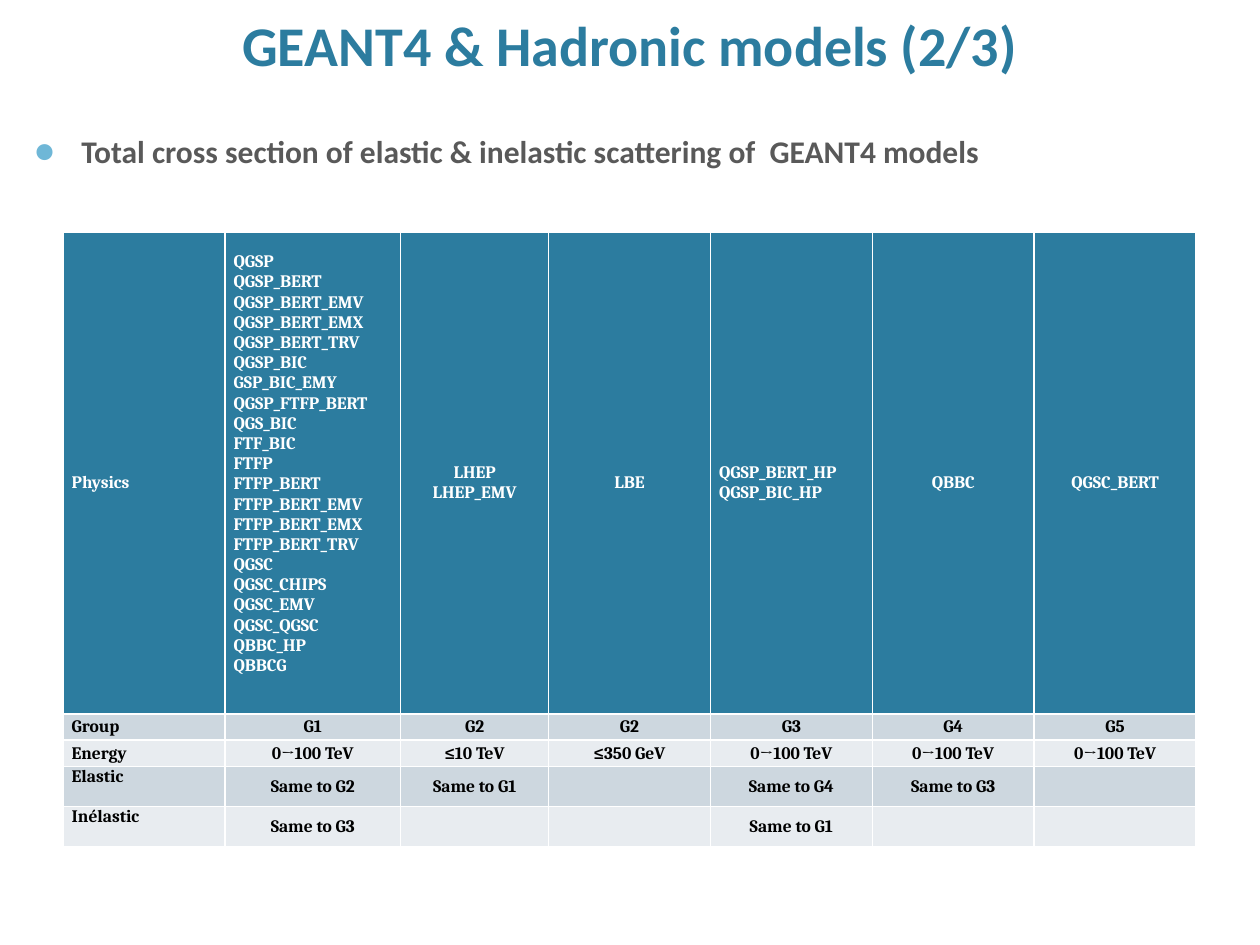
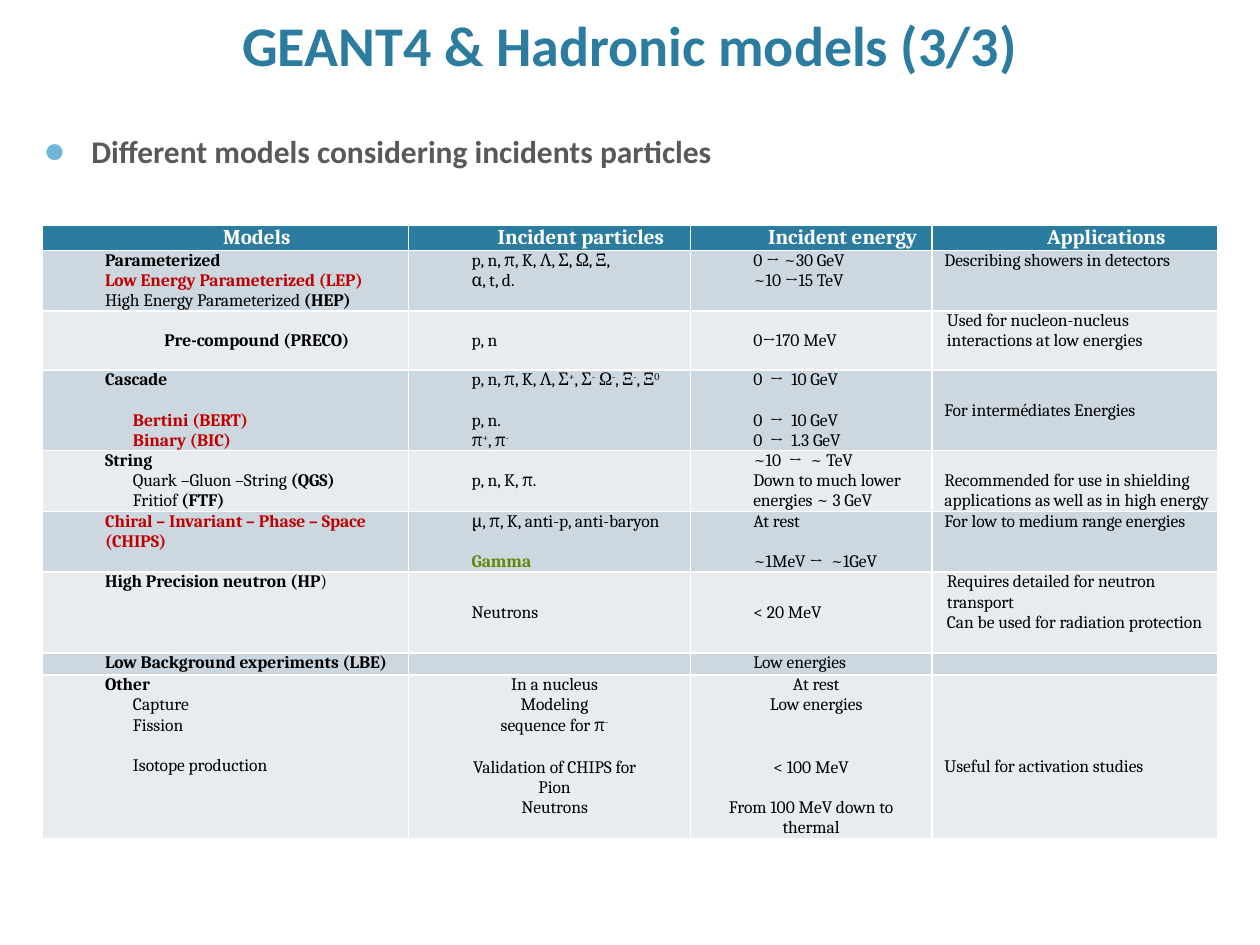
"""Builds two slides on GEANT4 hadronic models."""
import pptx
import pptx.dml.color
import pptx.enum.text
import pptx.oxml.ns
import pptx.util
from lxml import etree

Pt = pptx.util.Pt
ALIGN = pptx.enum.text.PP_ALIGN
ANCHOR = pptx.enum.text.MSO_ANCHOR

COLORS = {
    "teal": "2C7C9F", "bullet": "6FB7D7", "grey": "595959", "white": "FFFFFF",
    "black": "000000", "red": "C00000", "green": "5E8805",
    "band": "CDD7DF", "pale": "E8ECF0",
}
LINE = 11.5
INDENT = 36
SUB_INDENT = 52
NARROW = 7.2
SIDE = 8.64


def add_xml(parent, tag, **attributes):
    return etree.SubElement(parent, pptx.oxml.ns.qn(tag), attributes)


def write(paragraph, text, font="Cambria", size=10, color="black", bold=False):
    for position, part in enumerate(text.split("^")):
        if part:
            run = paragraph.add_run()
            run.text = part
            run.font.name = font
            run.font.size = Pt(size)
            run.font.bold = bold
            run.font.color.rgb = pptx.dml.color.RGBColor.from_string(COLORS[color])
            if position % 2:
                run.font._element.set("baseline", "30000")


def line(*runs, gap=0, indent=None, **style):
    pairs = [(run, {}) if isinstance(run, str) else run for run in runs]
    return {"runs": [(text, {**style, **own}) for text, own in pairs],
            "gap": gap, "indent": indent}


def bold(text, color="black", **place):
    return line(text, bold=True, color=color, **place)


def sub(*runs, **style):
    return line(*runs, indent=SUB_INDENT, **style)


def strong(text):
    return text, {"bold": True}


def cell(*lines, indent=INDENT, side=0, lead=0, middle=False, center=False):
    return {"lines": [line(item) if isinstance(item, str) else item for item in lines],
            "indent": indent, "side": side, "lead": lead,
            "middle": middle, "center": center}


def mid(*lines, **place):
    return cell(*lines, middle=True, **place)


def use(*lines, **place):
    return cell(*lines, **{"indent": NARROW, **place})


class Deck:
    def __init__(self):
        self.presentation = pptx.Presentation()
        self.presentation.slide_width = Pt(720)
        self.presentation.slide_height = Pt(540)
        self.slide = None

    def new_slide(self):
        layout = self.presentation.slide_layouts[1]
        self.slide = self.presentation.slides.add_slide(layout)

    def place(self, holder, left, top, width, height):
        holder.left, holder.top = Pt(left), Pt(top)
        holder.width, holder.height = Pt(width), Pt(height)
        holder.text_frame.word_wrap = True
        holder.text_frame.auto_size = pptx.enum.text.MSO_AUTO_SIZE.NONE
        return holder.text_frame

    def title(self, text, top):
        frame = self.place(self.slide.shapes.title, 0, top, 720, 48 - top)
        frame.vertical_anchor = ANCHOR.BOTTOM
        heading = frame.paragraphs[0]
        heading.alignment = ALIGN.CENTER
        write(heading, text, font="Calibri", size=32, color="teal", bold=True)

    def topic(self, text, left, width, height):
        frame = self.place(self.slide.placeholders[1], left, 72, width, height)
        frame.vertical_anchor = ANCHOR.TOP
        item = frame.paragraphs[0]
        item.space_before = Pt(20)
        properties = item._p.get_or_add_pPr()
        properties.set("marL", str(Pt(27)))
        properties.set("indent", str(-Pt(27)))
        add_xml(add_xml(properties, "a:buClr"), "a:srgbClr", val=COLORS["bullet"])
        add_xml(properties, "a:buSzPct", val="110000")
        add_xml(properties, "a:buFont", typeface="Calibri")
        add_xml(properties, "a:buChar", char="●")
        write(item, text, font="Calibri", size=18, color="grey", bold=True)

    def table(self, left, top, widths, heights, rows, header_size=10, body_bold=False):
        grid = self.slide.shapes.add_table(
            len(rows), len(widths), Pt(left), Pt(top),
            Pt(sum(widths)), Pt(sum(heights))).table
        for column, width in zip(grid.columns, widths):
            column.width = Pt(width)
        for number, (row, height) in enumerate(zip(rows, heights)):
            grid.rows[number].height = Pt(height)
            if number == 0:
                fill, style = "teal", {"size": header_size, "color": "white", "bold": True}
            else:
                fill, style = ("band" if number % 2 else "pale"), {"bold": body_bold}
            for column, content in enumerate(row):
                self.fill_cell(grid.cell(number, column), content, fill, style)

    def fill_cell(self, target, content, fill, style):
        properties = target._tc.get_or_add_tcPr()
        for side in ("a:lnL", "a:lnR", "a:lnT", "a:lnB"):
            border = add_xml(properties, side, w=str(Pt(1)))
            add_xml(add_xml(border, "a:solidFill"), "a:srgbClr", val=COLORS["white"])
        target.fill.solid()
        target.fill.fore_color.rgb = pptx.dml.color.RGBColor.from_string(COLORS[fill])
        target.margin_left = target.margin_right = Pt(content["side"])
        target.margin_top, target.margin_bottom = Pt(content["lead"] * LINE), 0
        target.vertical_anchor = ANCHOR.MIDDLE if content["middle"] else ANCHOR.TOP
        frame = target.text_frame
        if not content["lines"]:
            add_xml(frame.paragraphs[0]._p, "a:endParaRPr", sz="1000")
        for number, entry in enumerate(content["lines"]):
            paragraph = frame.add_paragraph() if number else frame.paragraphs[0]
            paragraph.alignment = ALIGN.CENTER if content["center"] else ALIGN.LEFT
            if entry["gap"]:
                paragraph.space_before = Pt(entry["gap"] * LINE)
            indent = content["indent"] if entry["indent"] is None else entry["indent"]
            paragraph._p.get_or_add_pPr().set("marL", str(Pt(indent)))
            for text, own in entry["runs"]:
                write(paragraph, text, **{**style, **own})


def physics_lists(deck):
    deck.new_slide()
    deck.title("GEANT4 & Hadronic models (2/3)", 6)
    deck.topic("Total cross section of elastic & inelastic scattering of  GEANT4 models",
               12.24, 690, 444)
    flush = {"indent": 0, "side": 5}
    centered = {**flush, "center": True}
    first_group = (
        "QGSP QGSP_BERT QGSP_BERT_EMV QGSP_BERT_EMX QGSP_BERT_TRV QGSP_BIC GSP_BIC_EMY "
        "QGSP_FTFP_BERT QGS_BIC FTF_BIC FTFP FTFP_BERT FTFP_BERT_EMV FTFP_BERT_EMX "
        "FTFP_BERT_TRV QGSC QGSC_CHIPS QGSC_EMV QGSC_QGSC QBBC_HP QBBCG").split()
    header = [
        mid("Physics", lead=1, **flush),
        cell(*first_group, lead=1, **flush),
        mid("LHEP", "LHEP_EMV", lead=1, **centered),
        mid("LBE", lead=1, **centered),
        mid("QGSP_BERT_HP", "QGSP_BIC_HP", lead=1, **flush),
        mid("QBBC", lead=1, **centered),
        mid("QGSC_BERT", lead=1, **centered),
    ]
    wide = "0→100 TeV"
    properties = {
        "Group": ["G1", "G2", "G2", "G3", "G4", "G5"],
        "Energy": [wide, "≤10 TeV", "≤350 GeV", wide, wide, wide],
        "Elastic": ["Same to G2", "Same to G1", "", "Same to G4", "Same to G3", ""],
        "Inélastic": ["Same to G3", "", "", "Same to G1", "", ""],
    }
    rows = [header]
    for label, values in properties.items():
        name = cell(label, middle=label in ("Group", "Energy"), **flush)
        rows.append([name] + [mid(*filter(None, [value]), **centered) for value in values])
    deck.table(36, 132.5, [92.5, 100.5, 84.5] + [92.5] * 4,
               [275.5, 15, 15, 22.9, 22.9], rows, body_bold=True)


def incident_particles(deck):
    deck.new_slide()
    deck.title("GEANT4 & Hadronic models (3/3)", 12)
    deck.topic("Different models considering incidents particles", 18, 684, 468)
    headings = ["Models", "Incident particles", "Incident energy", "Applications"]
    centered = {"center": True, "side": SIDE, "indent": 5.8}
    rows = [
        [mid(heading, center=True) for heading in headings],
        [cell(bold("Parameterized"), bold("Low Energy Parameterized (LEP)", "red"),
              line("High Energy Parameterized ", strong("(HEP)"))),
         cell("p, n, π, K, Λ, Σ, Ω, Ξ,", "α, t, d."),
         cell("0 → ~30 GeV", "~10 →15 TeV"),
         use("Describing showers in detectors")],
        [mid(bold("Pre-compound (PRECO)"), center=True),
         mid("p, n"),
         mid("0→170 MeV"),
         use("Used for nucleon-nucleus interactions at low energies", indent=0, side=SIDE)],
        [cell(bold("Cascade"),
              bold("Bertini (BERT)", "red", gap=1, indent=SUB_INDENT),
              bold("Binary (BIC)", "red", indent=SUB_INDENT)),
         cell("p, n, π, K, Λ, Σ^+^, Σ^-^ Ω^-^, Ξ^-^, Ξ^0", line("p, n.", gap=1), "π^+^, π^-"),
         cell("0  →  10 GeV", line("0  →  10 GeV", gap=1), "0  →  1.3 GeV"),
         use("For intermédiates Energies", middle=True)],
        [cell(bold("String"), sub("Quark –Gluon –String ", strong("(QGS)")),
              sub("Fritiof ", strong("(FTF)"))),
         mid("p, n, K, π."),
         mid("~10  →  ~ TeV", "Down to much lower energies ~ 3 GeV"),
         use("Recommended for use in shielding applications as well as in high energy",
             lead=1)],
        [cell(bold("Chiral – Invariant – Phase – Space (CHIPS)", "red")),
         cell("μ, π, K, anti-p, anti-baryon", bold("Gamma", "green", gap=1)),
         mid("At rest", line("~1MeV →  ~1GeV", gap=1)),
         use("For low to medium range energies")],
        [cell(line(strong("High Precision neutron (HP"), ")")),
         mid("Neutrons"),
         mid("< 20 MeV"),
         use("Requires detailed for neutron transport",
             "Can be used for radiation protection", indent=0, side=SIDE)],
        [cell(bold("Low Background experiments (LBE)")), cell(), cell("Low energies"), cell()],
        [cell(bold("Other"), sub("Capture"), sub("Fission"),
              sub("Isotope production", gap=1)),
         cell("In a nucleus", "Modeling", "sequence for π^-",
              line("Validation of CHIPS for", gap=1.1), "Pion", "Neutrons", **centered),
         cell("At rest", "Low energies", line("< 100 MeV", gap=2.1, indent=0),
              line("From 100 MeV down to thermal", gap=1, indent=0), **centered),
         use("Useful for activation studies", lead=1, middle=True)],
    ]
    deck.table(24, 128.8, [209.5, 161, 138, 163.5],
               [14.3, 34.5, 33.7, 46, 34.7, 34.7, 46.2, 12.6, 92.6], rows, header_size=12)


def main():
    deck = Deck()
    physics_lists(deck)
    incident_particles(deck)
    deck.presentation.save("out.pptx")


if __name__ == "__main__":
    main()
